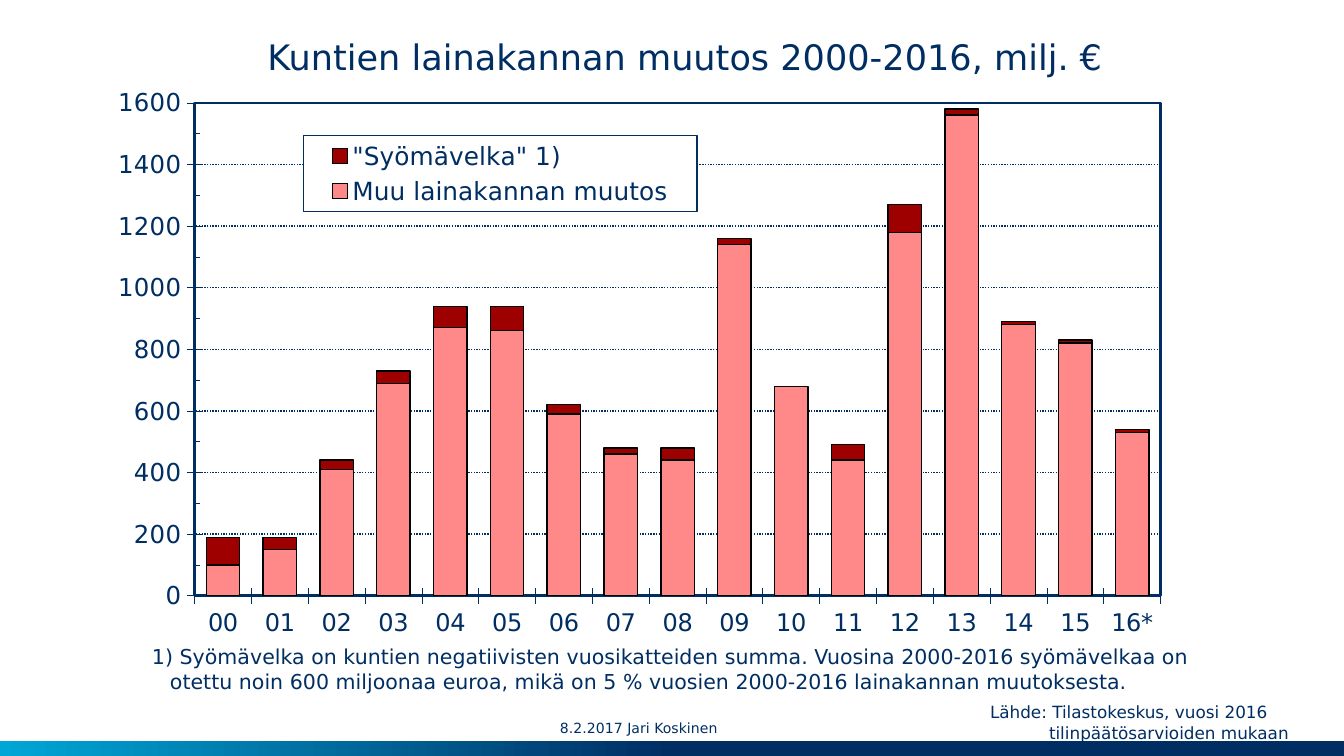
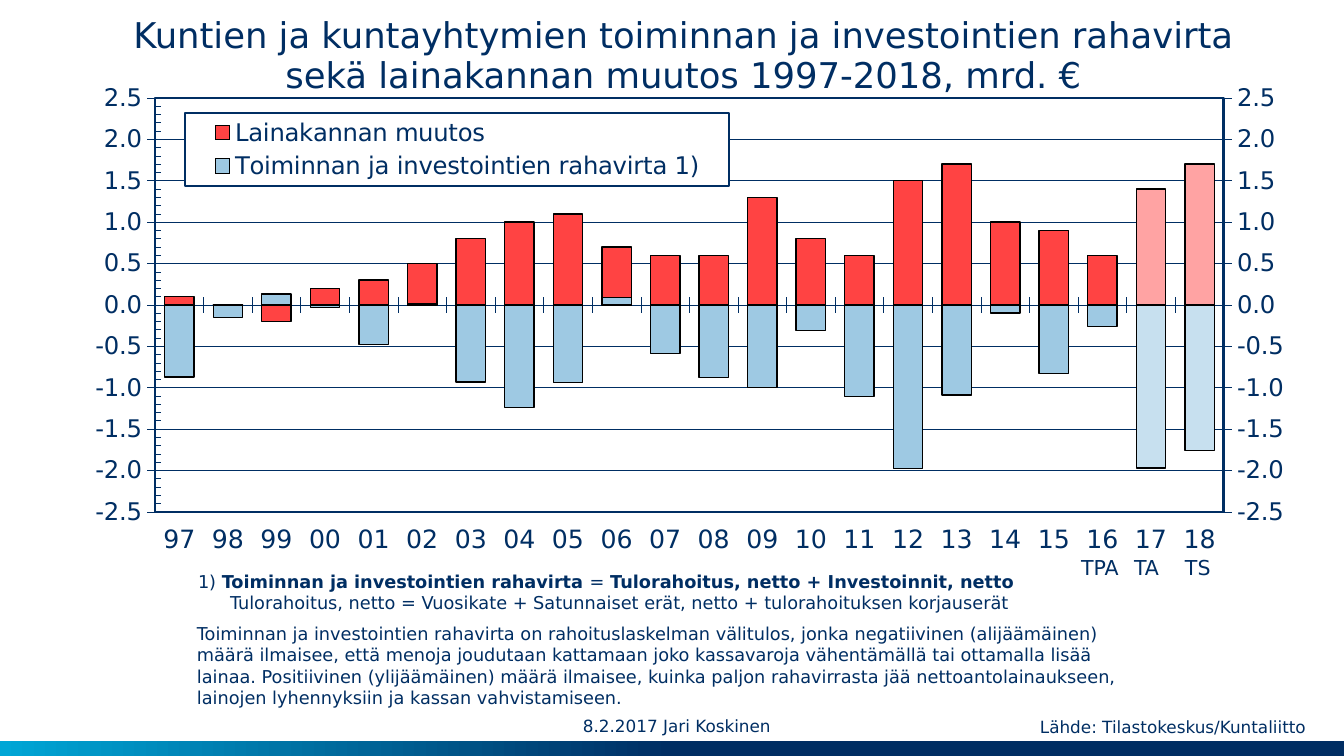
from copy import deepcopy

from lxml import etree
from pptx import Presentation
from pptx import util as u
from pptx.chart.data import CategoryChartData
from pptx.dml.color import RGBColor
from pptx.enum import chart as ch
from pptx.enum import dml, shapes, text
from pptx.oxml import parse_xml
from pptx.oxml.ns import nsdecls, qn

PX = 914400 / 134.4
FONT = "DejaVu Sans"
COLORS = {
    "navy": "002E63", "cyan": "00A6D6", "black": "000000", "white": "FFFFFF",
    "pink": "FF8989", "dark red": "9E0000",
    "red": "FF4343", "pale red": "FFA3A3",
    "blue": "9EC9E3", "pale blue": "C7E0EF",
}
SLIDE = (1344, 756)
BAND = (0, 741, 1344, 15)
DATE = "8.2.2017 Jari Koskinen"
INSETS = (13, 7, 13, 7)

# Paragraphs are (indent, [span, ...]); a span is (words, bold).
SLIDES = [
    {
        "title": {
            "at": (211, 20, 949, 65), "size": 18.8, "insets": (0, 7, 0, 7),
            "anchor": "BOTTOM", "align": "CENTER",
            "paras": [(0, [("Kuntien lainakannan muutos 2000-2016, milj. €", False)])],
        },
        "chart": {
            "at": (118, 85, 1102, 552), "type": "COLUMN_STACKED",
            "plot": (183, 103, 977, 495), "legend": (293, 136, 398, 76),
            "legend size": 13.4, "category size": 13, "value size": 13.2,
            "range": (0, 1600), "units": (200, 100), "format": "0",
            "grid": 0.75, "gap": 70, "overlap": 100, "two axes": False,
            "categories": [f"{year:02}" for year in range(16)] + ["16*"],
            "series": [
                ("Muu lainakannan muutos", "pink", None,
                 [100, 150, 410, 690, 870, 860, 590, 460, 440,
                  1140, 680, 440, 1180, 1560, 880, 820, 530]),
                ('"Syömävelka" 1)', "dark red", None,
                 [90, 40, 30, 40, 70, 80, 30, 20, 40, 20, 0, 50, 90, 20, 10, 10, 10]),
            ],
        },
        "texts": [
            {"at": (130, 637, 1090, 69), "size": 11, "paras": [
                (9, [("1) Syömävelka on kuntien negatiivisten vuosikatteiden summa. "
                      "Vuosina 2000-2016 syömävelkaa on", False)]),
                (27, [("otettu noin 600 miljoonaa euroa, mikä on 5 % vuosien "
                       "2000-2016 lainakannan muutoksesta.", False)])]},
            {"at": (560, 714, 183, 28), "size": 7.5, "insets": (0, 0, 0, 0),
             "anchor": "MIDDLE", "paras": [(0, [(DATE, False)])]},
            {"at": (977, 695, 339, 54), "size": 9, "paras": [
                (0, [("Lähde: Tilastokeskus, vuosi 2016", False)]),
                (59, [("tilinpäätösarvioiden mukaan", False)])]},
        ],
    },
    {
        "title": {
            "at": (123, 16, 1121, 82), "size": 19, "insets": (0, 0, 0, 0),
            "align": "CENTER", "spacing": 0.95,
            "paras": [
                (0, [("Kuntien ja kuntayhtymien toiminnan ja investointien rahavirta", False)]),
                (0, [("sekä lainakannan muutos 1997-2018, mrd. €", False)])],
        },
        "chart": {
            "at": (82, 83, 1215, 493), "type": "COLUMN_CLUSTERED",
            "plot": (155, 98, 1069, 414), "legend": (185, 113, 544, 73),
            "legend size": 13, "category size": 13.5, "value size": 13,
            "range": (-2.5, 2.5), "units": (0.5, 0.1), "format": "0.0",
            "grid": 0.25, "gap": 65, "overlap": 0, "two axes": True,
            "categories": [f"{year % 100:02}" for year in range(1997, 2019)],
            "series": [
                ("Lainakannan muutos", "red", "pale red",
                 [0.1, 0, -0.2, 0.2, 0.3, 0.5, 0.8, 1, 1.1, 0.7, 0.6,
                  0.6, 1.3, 0.8, 0.6, 1.5, 1.7, 1, 0.9, 0.6, 1.4, 1.7]),
                ("Toiminnan ja investointien rahavirta 1)", "blue", "pale blue",
                 [-0.87, -0.15, 0.13, -0.03, -0.48, 0.02, -0.93, -1.24, -0.94, 0.09, -0.59,
                  -0.88, -1, -0.31, -1.11, -1.98, -1.09, -0.1, -0.83, -0.26, -1.97, -1.76]),
            ],
        },
        "texts": [
            {"at": (583, 711, 231, 30), "size": 9, "insets": (0, 0, 0, 0),
             "anchor": "MIDDLE", "paras": [(0, [(DATE, False)])]},
            {"at": (184, 616, 961, 99), "size": 9.5, "paras": [
                (0, [("Toiminnan ja investointien rahavirta on rahoituslaskelman välitulos, "
                      "jonka negatiivinen (alijäämäinen) määrä ilmaisee, että menoja joudutaan "
                      "kattamaan joko kassavaroja vähentämällä tai ottamalla lisää lainaa. "
                      "Positiivinen (ylijäämäinen) määrä ilmaisee, kuinka paljon rahavirrasta "
                      "jää nettoantolainaukseen, lainojen lyhennyksiin ja kassan "
                      "vahvistamiseen.", False)])]},
            {"at": (180, 564, 933, 56), "size": 9.5, "paras": [
                (5, [("1) ", False), ("Toiminnan ja investointien rahavirta ", True),
                     ("= ", False), ("Tulorahoitus, netto + Investoinnit, netto", True)]),
                (37, [("Tulorahoitus, netto = Vuosikate + Satunnaiset erät, netto + "
                       "tulorahoituksen korjauserät", False)])]},
            {"at": (1027, 710, 305, 34), "size": 9,
             "paras": [(0, [("Lähde: Tilastokeskus/Kuntaliitto", False)])]},
        ] + [
            {"at": (left, 548, width, 39), "size": 11, "wrap": False,
             "paras": [(0, [(label, False)])]}
            for label, left, width in [("TPA", 1068, 66), ("TA", 1121, 54), ("TS", 1172, 54)]
        ],
    },
]


def emu(px):
    return u.Emu(round(px * PX))


def rgb(name):
    return RGBColor.from_string(COLORS[name])


def style_font(font, size):
    font.name, font.size, font.bold = FONT, u.Pt(size), False
    font.color.rgb = rgb("navy")


def place(shape, at):
    shape.left, shape.top, shape.width, shape.height = map(emu, at)


def write_text(shape, item):
    place(shape, item["at"])
    frame = shape.text_frame
    frame.word_wrap = item.get("wrap", True)
    frame.auto_size = text.MSO_AUTO_SIZE.NONE
    frame.vertical_anchor = text.MSO_ANCHOR[item.get("anchor", "TOP")]
    (frame.margin_left, frame.margin_top,
     frame.margin_right, frame.margin_bottom) = map(emu, item.get("insets", INSETS))
    for number, (indent, spans) in enumerate(item["paras"]):
        para = frame.add_paragraph() if number else frame.paragraphs[0]
        para.alignment = text.PP_ALIGN[item.get("align", "LEFT")]
        para.line_spacing = item.get("spacing", 1.0)
        para.space_before = u.Pt(0)
        if indent:
            para._p.get_or_add_pPr().set("marL", str(emu(indent)))
        style_font(para.font, item["size"])
        for words, bold in spans:
            span = para.add_run()
            span.text = words
            if bold:
                span.font.bold = True


def add_band(deck, page):
    """Draw the gradient band, then move it to the master that all slides share."""
    band = page.shapes.add_shape(shapes.MSO_SHAPE.RECTANGLE, *map(emu, BAND))
    band.shadow.inherit = False
    band.line.fill.background()
    band.fill.gradient()
    band.fill.gradient_angle = 180
    for stop, position, color in zip(band.fill.gradient_stops, (0.5, 1), ("navy", "cyan")):
        stop.position, stop.color.rgb = position, rgb(color)
    deck.slide_master.shapes[0].element.addprevious(band.element)


def paint_bar(item, color):
    item.format.fill.solid()
    item.format.fill.fore_color.rgb = rgb(color)
    item.format.line.color.rgb = rgb("black")
    item.format.line.width = u.Pt(0.75)


def manual_layout(rect, frame, inner):
    """Give rect as fractions of the chart frame."""
    left, top, width, height = rect
    parts = ((left - frame[0]) / frame[2], (top - frame[1]) / frame[3],
             width / frame[2], height / frame[3])
    target = '<c:layoutTarget val="inner"/>' if inner else ""
    modes = '<c:xMode val="edge"/><c:yMode val="edge"/>'
    sizes = "".join(f'<c:{key} val="{part:.4f}"/>' for key, part in zip("xywh", parts))
    return parse_xml(f'<c:layout {nsdecls("c")}><c:manualLayout>{target}{modes}{sizes}'
                     '</c:manualLayout></c:layout>')


def box_style(fill, points):
    inside = (f'<a:solidFill><a:srgbClr val="{COLORS[fill]}"/></a:solidFill>'
              if fill else "<a:noFill/>")
    return parse_xml(f'<c:spPr {nsdecls("c", "a")}>{inside}<a:ln w="{u.Pt(points)}"><a:solidFill>'
                     f'<a:srgbClr val="{COLORS["navy"]}"/></a:solidFill></a:ln></c:spPr>')


def remove_children(parent, tag):
    for child in parent.findall(qn(tag)):
        parent.remove(child)


def split_axes(plot_area):
    """Put the second series on a right-hand axis that mirrors the left one."""
    bars, category, value = (plot_area.find(qn(tag))
                             for tag in ("c:barChart", "c:catAx", "c:valAx"))
    right_bars, right_category, right_value = map(deepcopy, (bars, category, value))
    bars.remove(bars.findall(qn("c:ser"))[1])
    right_bars.remove(right_bars.find(qn("c:ser")))
    new_ids = {axis.find(qn("c:axId")).get("val"): new
               for axis, new in ((category, "5001"), (value, "5002"))}
    for part in (right_bars, right_category, right_value):
        for tag in ("c:axId", "c:crossAx"):
            for ref in part.findall(qn(tag)):
                ref.set("val", new_ids[ref.get("val")])
    remove_children(right_value, "c:majorGridlines")
    right_category.find(qn("c:delete")).set("val", "1")
    for tag, setting in (("c:axPos", "r"), ("c:crosses", "max"), ("c:minorTickMark", "none")):
        right_value.find(qn(tag)).set("val", setting)
    bars.addnext(right_bars)
    value.addnext(right_value)
    right_value.addnext(right_category)


def add_chart(page, item):
    data = CategoryChartData()
    data.categories = item["categories"]
    for name, _, _, values in item["series"]:
        data.add_series(name, values)
    chart = page.shapes.add_chart(ch.XL_CHART_TYPE[item["type"]],
                                  *map(emu, item["at"]), data).chart
    style_font(chart.font, item["value size"])
    chart.has_title = False

    plot = chart.plots[0]
    plot.vary_by_categories = False
    plot.gap_width, plot.overlap = item["gap"], item["overlap"]
    for series, (_, color, forecast, values) in zip(plot.series, item["series"]):
        series.invert_if_negative = False
        paint_bar(series, color)
        if forecast:
            for index in range(len(values) - 2, len(values)):
                paint_bar(series.points[index], forecast)

    value, category = chart.value_axis, chart.category_axis
    for axis, size in ((value, item["value size"]), (category, item["category size"])):
        style_font(axis.tick_labels.font, size)
        axis.major_tick_mark = ch.XL_TICK_MARK.CROSS
        axis.minor_tick_mark = ch.XL_TICK_MARK.NONE
        axis.format.line.color.rgb = rgb("navy")
        axis.format.line.width = u.Pt(0.3)
    category.tick_label_position = ch.XL_TICK_LABEL_POSITION.LOW
    value.minimum_scale, value.maximum_scale = item["range"]
    value.major_unit, value.minor_unit = item["units"]
    value.minor_tick_mark = ch.XL_TICK_MARK.INSIDE
    value.tick_labels.number_format = item["format"]
    value.tick_labels.number_format_is_linked = False
    grid = value.major_gridlines.format.line
    grid.color.rgb, grid.width = rgb("navy"), u.Pt(item["grid"])
    grid.dash_style = dml.MSO_LINE.ROUND_DOT

    chart.has_legend = True
    chart.legend.position = ch.XL_LEGEND_POSITION.RIGHT
    chart.legend.include_in_layout = False
    style_font(chart.legend.font, item["legend size"])
    legend = chart.element.find(".//" + qn("c:legend"))
    remove_children(legend, "c:layout")
    overlay = legend.find(qn("c:overlay"))
    overlay.addprevious(manual_layout(item["legend"], item["at"], False))
    overlay.addnext(box_style("white", 0.75))

    plot_area = chart.element.find(".//" + qn("c:plotArea"))
    remove_children(plot_area, "c:layout")
    plot_area.insert(0, manual_layout(item["plot"], item["at"], True))
    plot_area.append(box_style(None, 1.5))
    if item["two axes"]:
        split_axes(plot_area)


def main():
    deck = Presentation()
    deck.slide_width, deck.slide_height = map(emu, SLIDE)
    title_only = deck.slide_layouts[5]
    for number, content in enumerate(SLIDES):
        page = deck.slides.add_slide(title_only)
        if number == 0:
            add_band(deck, page)
        write_text(page.shapes.title, content["title"])
        add_chart(page, content["chart"])
        for item in content["texts"]:
            write_text(page.shapes.add_textbox(0, 0, 0, 0), item)
    deck.save("out.pptx")


if __name__ == "__main__":
    main()
